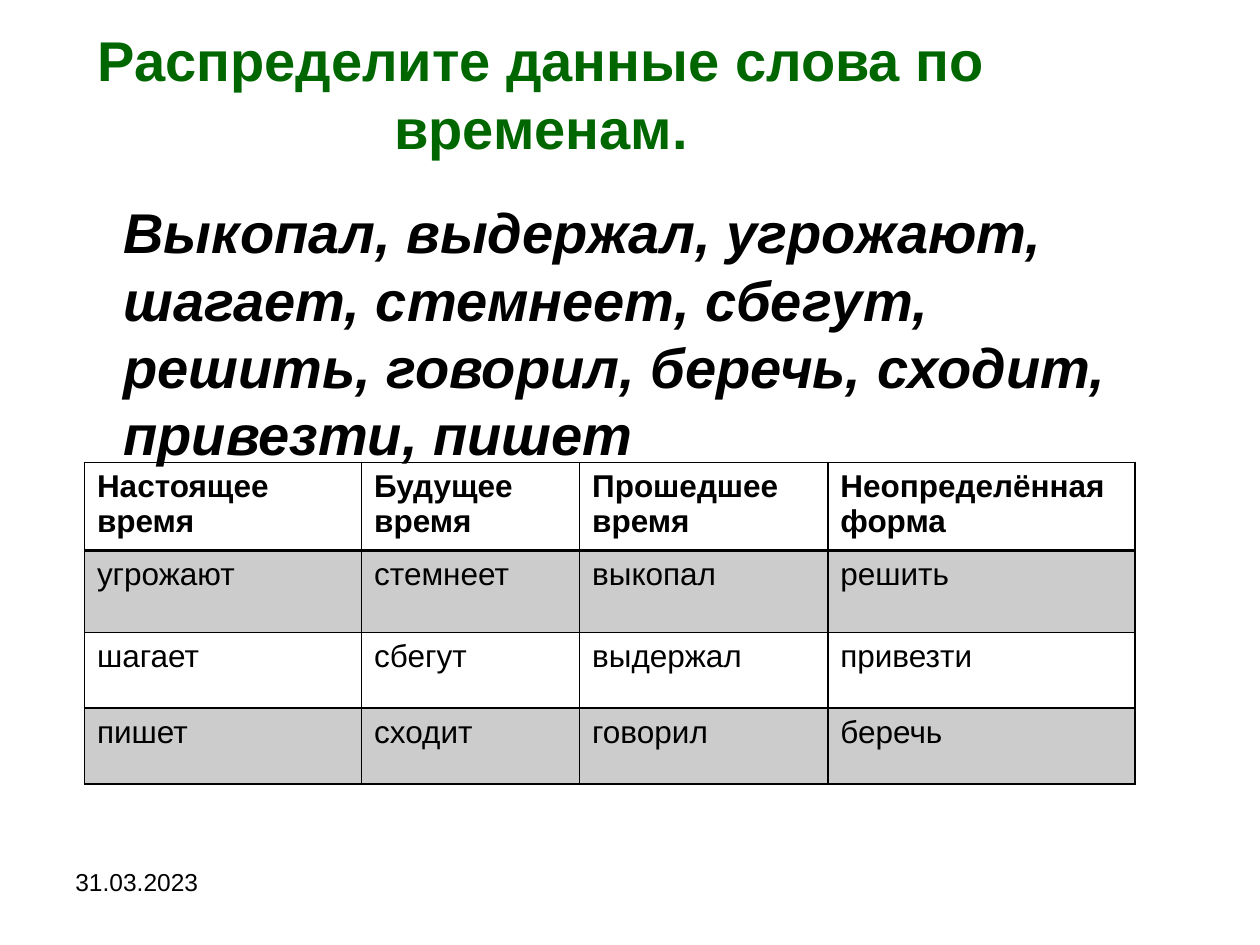
from dataclasses import dataclass

from lxml import etree
from pptx import Presentation
from pptx import util as u
from pptx.dml import color
from pptx.enum import text
from pptx.oxml import ns


@dataclass(frozen=True)
class Theme:
    font: str = "Arial"
    ink: str = "000000"
    title_ink: str = "006600"
    band_alpha: int = 20
    heading_size: int = 32
    table_size: int = 18
    date_size: int = 14
    border: int = 1
    header_border: int = 2


def add_element(parent, tag, **attributes):
    return etree.SubElement(parent, ns.qn(tag), attributes)


class SlideBuilder:
    def __init__(self, slide, theme):
        self.slide = slide
        self.theme = theme

    def place(self, shape, left, top, width, height):
        shape.left, shape.top = u.Inches(left), u.Inches(top)
        shape.width, shape.height = u.Inches(width), u.Inches(height)

    def add_span(self, para, words, size, ink=None, bold=False, italic=False):
        span = para.add_run()
        span.text = words
        span.font.name = self.theme.font
        span.font.size = u.Pt(size)
        span.font.bold = bold
        span.font.italic = italic
        span.font.color.rgb = color.RGBColor.from_string(ink or self.theme.ink)

    def title(self, words, *place):
        box = self.slide.shapes.title
        self.place(box, *place)
        frame = box.text_frame
        frame.auto_size = text.MSO_AUTO_SIZE.NONE
        frame.vertical_anchor = text.MSO_ANCHOR.MIDDLE
        frame.margin_bottom = u.Inches(0.55)
        para = frame.paragraphs[0]
        para.alignment = text.PP_ALIGN.CENTER
        self.add_span(para, words, self.theme.heading_size,
                      self.theme.title_ink, bold=True)

    def body(self, words, *place):
        box = self.slide.placeholders[1]
        self.place(box, *place)
        frame = box.text_frame
        frame.auto_size = text.MSO_AUTO_SIZE.NONE
        frame.margin_top = u.Inches(0.1)
        para = frame.paragraphs[0]
        para.space_before = u.Pt(0)
        properties = para._p.get_or_add_pPr()
        properties.set("marL", str(u.Inches(0.38)))
        properties.set("indent", "0")
        add_element(properties, "a:buNone")
        self.add_span(para, words, self.theme.heading_size,
                      bold=True, italic=True)

    def date(self, words, *place):
        box = self.slide.shapes.add_textbox(*map(u.Inches, place))
        box.text_frame.word_wrap = True
        self.add_span(box.text_frame.paragraphs[0], words,
                      self.theme.date_size)

    def table(self, rows, left, top, widths, heights):
        frame = self.slide.shapes.add_table(
            len(rows), len(widths), u.Inches(left), u.Inches(top),
            u.Inches(sum(widths)), u.Inches(sum(heights)))
        table = frame.table
        table.first_row = table.horz_banding = False
        for column, width in zip(table.columns, widths):
            column.width = u.Inches(width)
        for row, height in zip(table.rows, heights):
            row.height = u.Inches(height)
        for r, row in enumerate(rows):
            for c, words in enumerate(row):
                cell = table.cell(r, c)
                self.add_span(cell.text_frame.paragraphs[0], words,
                              self.theme.table_size, bold=r == 0)
                self.fill_cell(cell, banded=r % 2 == 1)
                self.border_cell(cell, r)

    def fill_cell(self, cell, banded):
        if not banded:
            cell.fill.background()
            return
        cell.fill.solid()
        cell.fill.fore_color.rgb = color.RGBColor.from_string(self.theme.ink)
        tint = cell._tc.tcPr.find(".//" + ns.qn("a:srgbClr"))
        add_element(tint, "a:alpha", val=str(self.theme.band_alpha * 1000))

    def border_cell(self, cell, row):
        """Draw four borders, with a heavier rule under the header row."""
        properties = cell._tc.get_or_add_tcPr()
        heavy = {(0, "B"), (1, "T")}
        for index, side in enumerate("LRTB"):
            points = (self.theme.header_border if (row, side) in heavy
                      else self.theme.border)
            line = etree.Element(ns.qn(f"a:ln{side}"), w=str(u.Pt(points)))
            fill = add_element(line, "a:solidFill")
            add_element(fill, "a:srgbClr", val=self.theme.ink)
            properties.insert(index, line)


def main():
    deck = Presentation()
    deck.slide_width, deck.slide_height = u.Inches(10), u.Inches(7.5)
    slide = deck.slides.add_slide(deck.slide_layouts[1])
    builder = SlideBuilder(slide, Theme())

    builder.date("31.03.2023", 0.5, 6.83, 2.33, 0.52)
    builder.title("Распределите данные слова по временам.",
                  0.28, 0.36, 8.03, 1.26)
    builder.body("Выкопал, выдержал, угрожают, шагает, стемнеет, сбегут, "
                 "решить, говорил, беречь, сходит, привезти, пишет",
                 0.5, 1.47, 9, 5.67)
    builder.table(
        [("Настоящее время", "Будущее время",
          "Прошедшее время", "Неопределённая форма"),
         ("угрожают", "стемнеет", "выкопал", "решить"),
         ("шагает", "сбегут", "выдержал", "привезти"),
         ("пишет", "сходит", "говорил", "беречь")],
        0.67, 3.67, widths=(2.2, 1.73, 1.97, 2.44),
        heights=(0.6, 0.65, 0.6, 0.6))
    deck.save("out.pptx")


if __name__ == "__main__":
    main()
